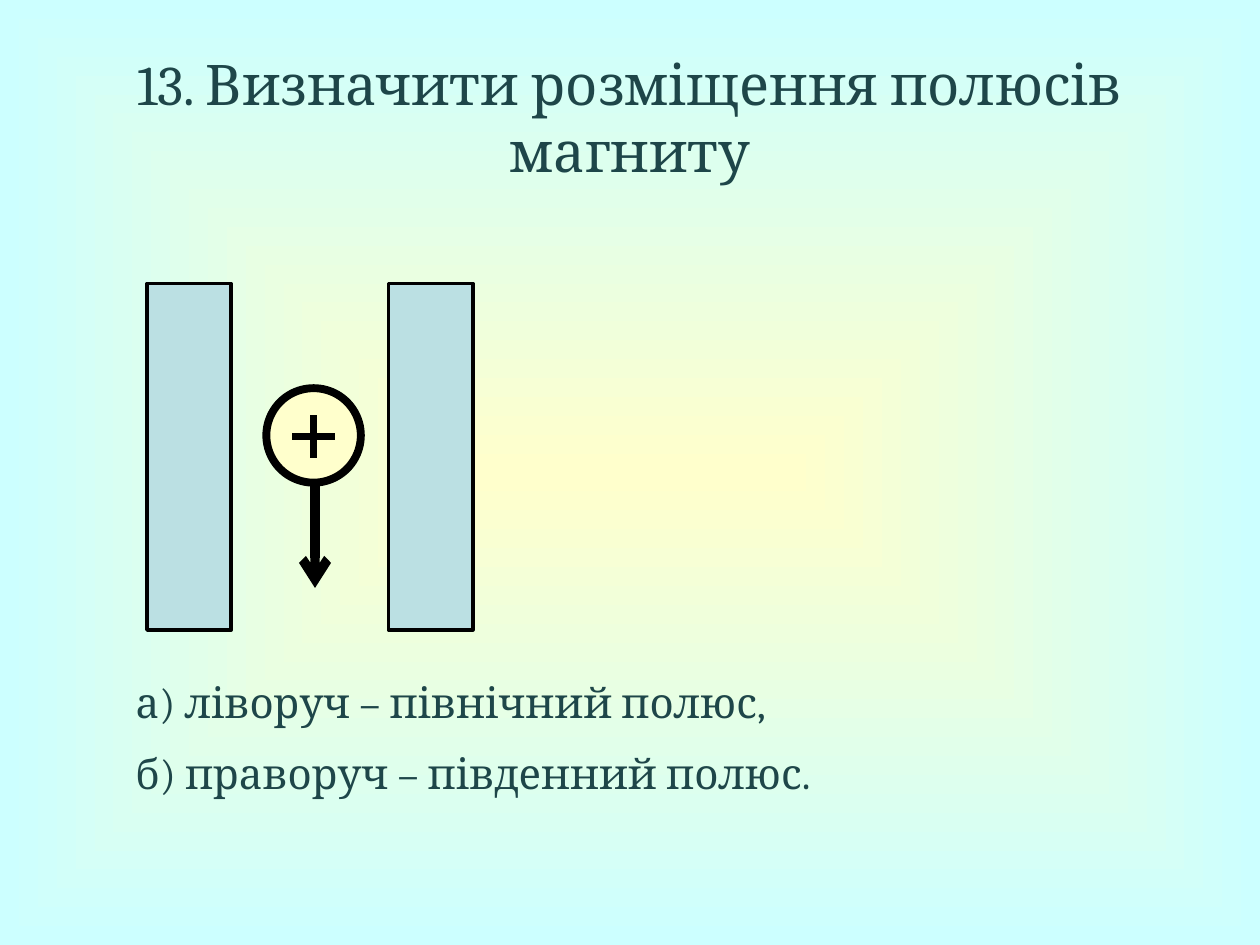
from dataclasses import dataclass

from lxml.etree import SubElement as Sub
from pptx import Presentation
from pptx.dml.color import RGBColor as RGB
from pptx.enum.shapes import MSO_CONNECTOR as Conn, MSO_SHAPE as Shape
from pptx.enum.text import MSO_ANCHOR as Anchor, PP_ALIGN as Align
from pptx.oxml.ns import qn
from pptx.util import Pt


@dataclass(frozen=True)
class Theme:
    font: str = "Cambria"
    head: int = 32
    body: int = 24
    text: RGB = RGB(0x1E, 0x46, 0x49)
    ink: RGB = RGB(0, 0, 0)
    pole: RGB = RGB(0xBB, 0xE0, 0xE3)
    core: RGB = RGB(0xFF, 0xFF, 0xCC)
    edge: RGB = RGB(0xCC, 0xFF, 0xFF)


theme = Theme()
prs = Presentation()
prs.slide_width, prs.slide_height = Pt(720), Pt(540)
slide = prs.slides.add_slide(prs.slide_layouts[6])


def add_text(lines, box, size, align=Align.LEFT, anchor=Anchor.TOP, gap=0):
    frame = slide.shapes.add_textbox(*map(Pt, box)).text_frame
    frame.word_wrap = True
    frame.vertical_anchor = anchor
    for i, line in enumerate(lines):
        para = frame.add_paragraph() if i else frame.paragraphs[0]
        para.alignment = align
        para.space_before = Pt(gap)
        run = para.add_run()
        run.text = line
        run.font.name, run.font.size = theme.font, Pt(size)
        run.font.color.rgb = theme.text


def add_line(group, start, end, width):
    line = group.shapes.add_connector(Conn.STRAIGHT, *map(Pt, start + end))
    line.line.color.rgb = theme.ink
    line.line.width = Pt(width)
    Sub(line._element.spPr, qn("a:effectLst"))
    return line


# Background: gradient from the centre out to the edges
fill = slide.background.fill
fill.gradient()
for stop, color, place in zip(fill.gradient_stops, (theme.core, theme.edge), (0, 1)):
    stop.color.rgb = color
    stop.position = place
grad = slide._element.find(".//" + qn("a:gradFill"))
grad.remove(grad.find(qn("a:lin")))
shade = Sub(grad, qn("a:path"), path="shape")
Sub(shade, qn("a:fillToRect"), {side: "50000" for side in "ltrb"})

add_text(["13. Визначити розміщення полюсів магниту"], (36, 21.6, 648, 90),
         theme.head, align=Align.CENTER, anchor=Anchor.MIDDLE)
add_text(["а) ліворуч – північний полюс,", "б) праворуч – південний полюс."],
         (70.5, 383, 590, 80), theme.body, gap=12)

# Magnet: two poles with a conductor between them
magnet = slide.shapes.add_group_shape()
mid, level, arm, rad = 179.2, 249.5, 12.2, 27
pole = (48.2, 198)
for kind, box, color, width in (
    (Shape.RECTANGLE, (84, 162, *pole), theme.pole, 2),
    (Shape.RECTANGLE, (222, 162, *pole), theme.pole, 2),
    (Shape.OVAL, (mid - rad, level - rad - 0.7, 2 * rad, 2 * rad), theme.core, 4.5),
):
    part = magnet.shapes.add_shape(kind, *map(Pt, box))
    part.shadow.inherit = False
    part.fill.solid()
    part.fill.fore_color.rgb = color
    part.line.color.rgb = theme.ink
    part.line.width = Pt(width)

force = add_line(magnet, (180, 276), (180, 336), 5.25)
Sub(force.line._get_or_add_ln(), qn("a:tailEnd"), type="arrow")
add_line(magnet, (mid - arm, level), (mid + arm, level), 4)
add_line(magnet, (mid, level + arm), (mid, level - arm), 4)

prs.save("out.pptx")
